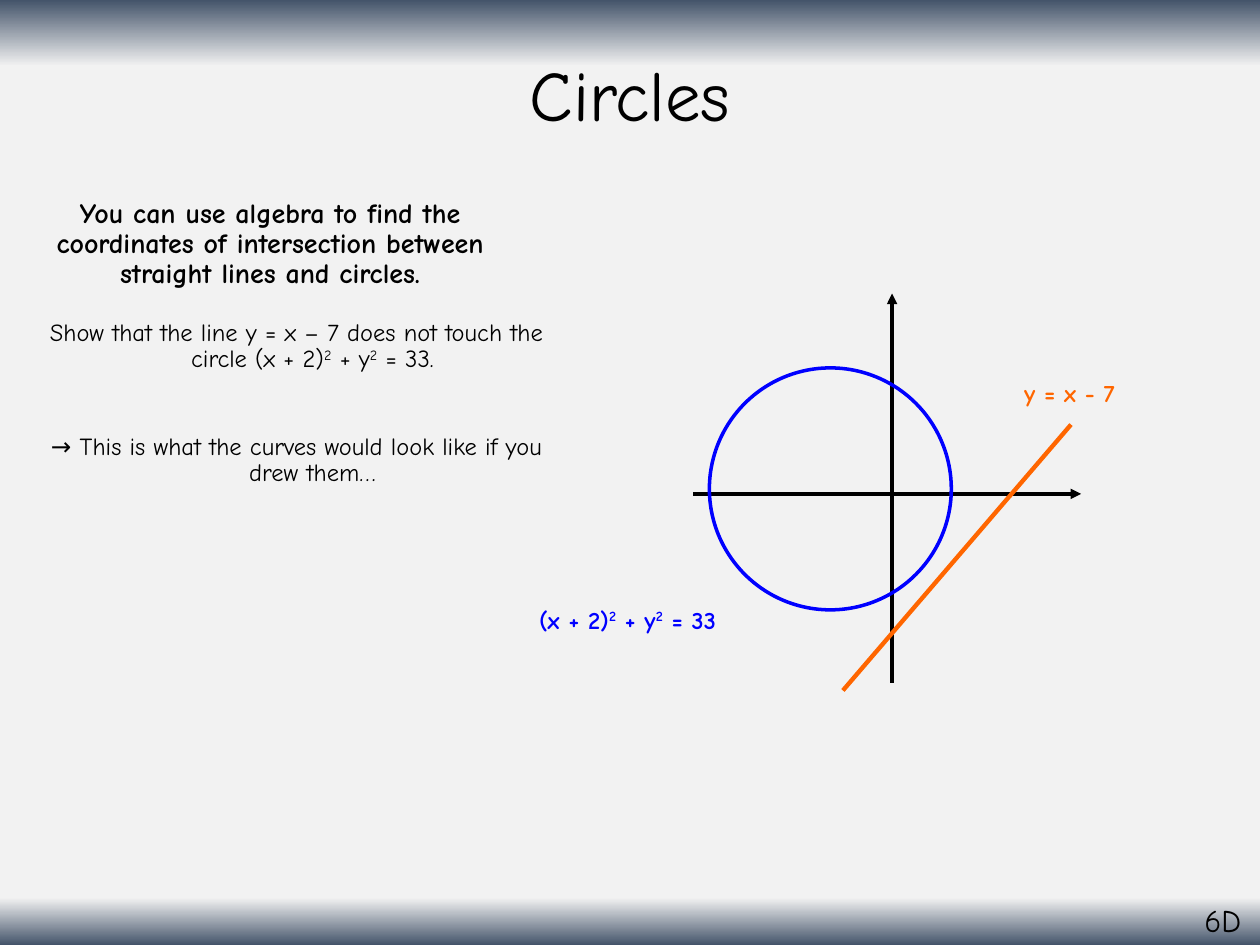
import dataclasses

import lxml.etree
import pptx
import pptx.dml.color
import pptx.enum.shapes
import pptx.enum.text
import pptx.oxml
import pptx.oxml.ns
import pptx.util

Inches = pptx.util.Inches
Pt = pptx.util.Pt
qn = pptx.oxml.ns.qn
ALIGN = pptx.enum.text.PP_ALIGN
ANCHOR = pptx.enum.text.MSO_ANCHOR
BLACK, BLUE, ORANGE = "000000", "0000FF", "FF6600"
SLATE, PALE = "44546A", "F2F2F2"


@dataclasses.dataclass
class Label:
    box: tuple[float, float, float, float]
    lines: list[str]
    size: float
    color: str = BLACK
    bold: bool = False
    block: bool = False
    hang: float = 0
    gap: float = 10
    middle: bool = False


@dataclasses.dataclass
class Stroke:
    start: tuple[float, float]
    end: tuple[float, float]
    color: str = BLACK
    width: float = 2
    arrow: bool = True


LABELS = [
    Label((0.69, 0.24, 8.62, 1.09), ["Circles"], 40.5, block=True, middle=True),
    Label(
        (0.16, 1.53, 3.97, 5.22),
        ["You can use algebra to find the coordinates of intersection "
         "between straight lines and circles."],
        16, bold=True, block=True,
    ),
    Label((9.46, 7.1, 0.54, 0.4), ["6D"], 18),
    Label(
        (0.21, 2.49, 4.29, 4.21),
        ["Show that the line y = x – 7 does not touch the circle "
         "(x + 2)^2^ + y^2^ = 33.",
         "→ This is what the curves would look like if you drew them…"],
        14, block=True, hang=0.25, gap=35,
    ),
    Label((4.18, 4.75, 1.96, 0.34), ["(x + 2)^2^ + y^2^ = 33"], 14, BLUE, True),
    Label((8.03, 2.95, 1.13, 0.34), ["y = x - 7"], 14, ORANGE, True),
]

AXES = [Stroke((7.08, 5.42), (7.08, 2.33)), Stroke((5.5, 3.92), (8.58, 3.92))]
CHORD = Stroke((8.5, 3.37), (6.69, 5.48), ORANGE, 2.5, False)


def paint(color, value: str) -> None:
    color.rgb = pptx.dml.color.RGBColor.from_string(value)


def shade(slide) -> None:
    fill = slide.background.fill
    fill.gradient()
    grad = slide.background._cSld.find(".//" + qn("a:gradFill"))
    for part in list(grad):
        grad.remove(part)
    stops = lxml.etree.SubElement(grad, qn("a:gsLst"))
    for spot, value in ((0, SLATE), (7, PALE), (95, PALE), (100, SLATE)):
        stop = lxml.etree.SubElement(stops, qn("a:gs"), pos=str(spot * 1000))
        lxml.etree.SubElement(stop, qn("a:srgbClr"), val=value)
    lxml.etree.SubElement(grad, qn("a:lin"), ang="5400000", scaled="0")


def write(slide, label: Label) -> None:
    frame = slide.shapes.add_textbox(*map(Inches, label.box)).text_frame
    frame.word_wrap = label.block
    if label.middle:
        frame.vertical_anchor = ANCHOR.MIDDLE
    for row, line in enumerate(label.lines):
        para = frame.add_paragraph() if row else frame.paragraphs[0]
        if label.block:
            para.alignment = ALIGN.CENTER
            para.line_spacing = 0.9
            para.space_before = Pt(label.gap if row else 10)
        if label.hang:
            props = para._p.get_or_add_pPr()
            props.set("marL", str(Inches(label.hang)))
            props.set("indent", str(Inches(-label.hang)))
        for turn, piece in enumerate(line.split("^")):
            run = para.add_run()
            run.text = piece
            run.font.name = "Comic Neue"
            run.font.size = Pt(label.size)
            run.font.bold = label.bold
            paint(run.font.color, label.color)
            if turn % 2:
                run._r.get_or_add_rPr().set("baseline", "30000")


def draw(slide, stroke: Stroke) -> None:
    kind = pptx.enum.shapes.MSO_CONNECTOR.STRAIGHT
    ends = map(Inches, (*stroke.start, *stroke.end))
    link = slide.shapes.add_connector(kind, *ends)
    paint(link.line.color, stroke.color)
    link.line.width = Pt(stroke.width)
    if stroke.arrow:
        edge = link.line._get_or_add_ln()
        lxml.etree.SubElement(edge, qn("a:tailEnd"), type="triangle")
    lxml.etree.SubElement(link._element.spPr, qn("a:effectLst"))


def ring(slide) -> None:
    kind = pptx.enum.shapes.MSO_SHAPE.OVAL
    box = map(Inches, (5.63, 2.92, 1.92, 1.92))
    shape = slide.shapes.add_shape(kind, *box)
    shape.shadow.inherit = False
    shape.fill.background()
    paint(shape.line.color, BLUE)
    shape.line.width = Pt(2)


def main() -> None:
    deck = pptx.Presentation()
    deck.slide_width, deck.slide_height = Inches(10), Inches(7.5)
    slide = deck.slides.add_slide(deck.slide_layouts[6])
    shade(slide)
    for axis in AXES:
        draw(slide, axis)
    ring(slide)
    draw(slide, CHORD)
    for label in LABELS:
        write(slide, label)
    deck.save("out.pptx")


if __name__ == "__main__":
    main()
